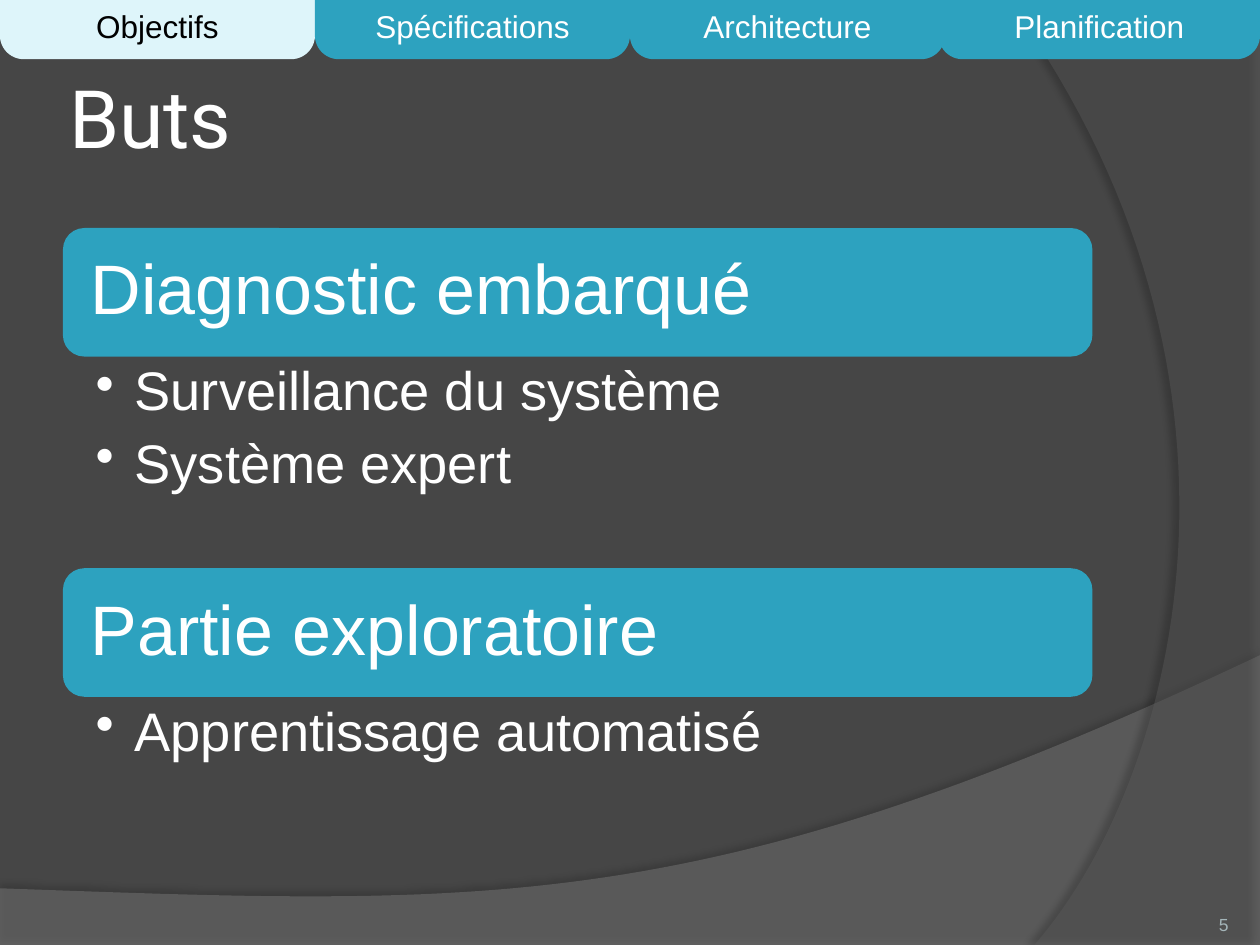
from lxml.etree import SubElement
from pptx import Presentation
from pptx.dml.color import RGBColor
from pptx.enum.shapes import MSO_SHAPE as Shape
from pptx.enum.text import MSO_ANCHOR as Anchor, PP_ALIGN as Align
from pptx.oxml.ns import qn
from pptx.util import Inches, Pt

BACKGROUND = RGBColor(0x46, 0x46, 0x46)
WAVE = RGBColor(0x7F, 0x7F, 0x7F)
ARC = RGBColor(0x5E, 0x5E, 0x5E)
TEAL = RGBColor(0x2D, 0xA2, 0xBF)
PALE = RGBColor(0xDE, 0xF5, 0xFA)
WHITE = RGBColor(0xFF, 0xFF, 0xFF)
BLACK = RGBColor(0x00, 0x00, 0x00)
NUMBER_GREY = RGBColor(0xA4, 0xB5, 0xB9)

LEFT, WIDTH = 0.5, 8.17
HEADER_HEIGHT = 1.02
TAB_HEIGHT = 0.47
GOALS = [
    (1.81, 1.68, "Diagnostic embarqué", ["Surveillance du système", "Système expert"]),
    (4.51, 1.11, "Partie exploratoire", ["Apprentissage automatisé"]),
]
TABS = [
    (0, 2.5, "Objectifs"),
    (2.5, 2.5, "Spécifications"),
    (5, 2.5, "Architecture"),
    (7.45, 2.55, "Planification"),
]


def bezier(start, control1, control2, end, steps=60):
    """Return the points of a cubic curve after its start."""
    points = []
    for step in range(1, steps + 1):
        t = step / steps
        weights = ((1 - t) ** 3, 3 * t * (1 - t) ** 2, 3 * t * t * (1 - t), t ** 3)
        corners = (start, control1, control2, end)
        points.append(tuple(sum(w * corner[axis] for w, corner in zip(weights, corners))
                            for axis in (0, 1)))
    return points


def add_backdrop(slide, points, color, opacity, shadow):
    """Draw a translucent outline; shadow is opacity, blur, distance, direction."""
    (x, y), *others = [(Inches(x), Inches(y)) for x, y in points]
    builder = slide.shapes.build_freeform(x, y)
    builder.add_line_segments(others, close=True)
    shape = builder.convert_to_shape()
    paint(shape, color)
    fill_color = shape.fill._xPr.find(qn("a:solidFill"))[0]
    SubElement(fill_color, qn("a:alpha"), val=str(opacity * 1000))

    shadow_opacity, blur, distance, direction = shadow
    effects = shape._element.spPr.find(qn("a:effectLst"))
    outer = SubElement(effects, qn("a:outerShdw"), blurRad=str(Pt(blur)),
                       dist=str(Pt(distance)), dir=str(direction * 60000),
                       algn="ctr", rotWithShape="0")
    shadow_color = SubElement(outer, qn("a:srgbClr"), val=str(BLACK))
    SubElement(shadow_color, qn("a:alpha"), val=str(shadow_opacity * 1000))


def paint(shape, color):
    shape.shadow.inherit = False
    shape.fill.solid()
    shape.fill.fore_color.rgb = color
    shape.line.fill.background()


def set_frame(frame, insets=(0.1, 0.05, 0.1, 0.05), anchor=Anchor.MIDDLE):
    frame.word_wrap = True
    frame.vertical_anchor = anchor
    for side, inset in zip(("left", "top", "right", "bottom"), insets):
        setattr(frame, f"margin_{side}", Inches(inset))


def write(para, text, size, color=WHITE, font="Arial", **paragraph_format):
    for name, value in paragraph_format.items():
        setattr(para, name, value)
    span = para.add_run()
    span.text = text
    for name, value in {"name": font, "size": Pt(size)}.items():
        setattr(span.font, name, value)
    span.font.color.rgb = color


def add_bullet(para):
    properties = para._p.get_or_add_pPr()
    properties.set("marL", str(Inches(0.31)))
    properties.set("indent", str(Inches(-0.31)))
    SubElement(properties, qn("a:buChar"), char="•")


def add_title(slide, text):
    title = slide.shapes.title
    place = {"left": LEFT, "top": 0.3, "width": WIDTH, "height": 1.25}
    for name, value in place.items():
        setattr(title, name, Inches(value))
    set_frame(title.text_frame, (0.05,) * 4)
    write(title.text_frame.paragraphs[0], text, 46, font="Roboto", alignment=Align.LEFT)


def add_goal(slide, top, list_height, heading, items):
    """Add a rounded heading with its bulleted list directly below."""
    header = slide.shapes.add_shape(Shape.ROUNDED_RECTANGLE, Inches(LEFT), Inches(top),
                                    Inches(WIDTH), Inches(HEADER_HEIGHT))
    paint(header, TEAL)
    set_frame(header.text_frame, (0.17,) * 4)
    write(header.text_frame.paragraphs[0], heading, 40,
          alignment=Align.LEFT, line_spacing=0.9)

    box = slide.shapes.add_textbox(Inches(LEFT), Inches(top + HEADER_HEIGHT),
                                   Inches(WIDTH), Inches(list_height))
    frame = box.text_frame
    set_frame(frame, (0.26, 0.06, 0.31, 0.06), Anchor.TOP)
    for index, item in enumerate(items):
        para = frame.add_paragraph() if index else frame.paragraphs[0]
        write(para, item, 31, line_spacing=0.9, space_after=Pt(8))
        add_bullet(para)


def add_page_number(slide, number):
    box = slide.shapes.add_textbox(Inches(8.92), Inches(7.02), Inches(0.83), Inches(0.4))
    set_frame(box.text_frame, (0,) * 4, Anchor.BOTTOM)
    write(box.text_frame.paragraphs[0], number, 10, NUMBER_GREY, alignment=Align.RIGHT)


def add_tab(slide, left, width, label, active):
    tab = slide.shapes.add_shape(Shape.ROUND_2_SAME_RECTANGLE, Inches(left), 0,
                                 Inches(width), Inches(TAB_HEIGHT))
    tab.adjustments[0] = 0
    tab.adjustments[1] = 0.4
    paint(tab, PALE if active else TEAL)
    set_frame(tab.text_frame)
    write(tab.text_frame.paragraphs[0], label, 18, BLACK if active else WHITE,
          alignment=Align.CENTER)


def main():
    deck = Presentation()
    deck.slide_width, deck.slide_height = Inches(10), Inches(7.5)
    slide = deck.slides.add_slide(deck.slide_layouts[5])
    slide.background.fill.solid()
    slide.background.fill.fore_color.rgb = BACKGROUND

    wave = [(0, 7.05), (0, 7.51), (10, 7.51), (10, 5.2)]
    wave += bezier(wave[-1], (5.59, 7.29), (3.91, 7.19), wave[0])
    add_backdrop(slide, wave, WAVE, 45, (35, 4, 3.5, 270))
    arc = [(10, 0.02), (10, 7.5), (8.21, 7.5)]
    arc += bezier(arc[-1], (9.35, 6.19), (10.18, 3), (8, 0))
    add_backdrop(slide, arc, ARC, 40, (45, 4, 4, 180))

    add_title(slide, "Buts")
    for goal in GOALS:
        add_goal(slide, *goal)
    add_page_number(slide, "5")
    for index, tab in enumerate(TABS):
        add_tab(slide, *tab, active=index == 0)
    deck.save("out.pptx")


if __name__ == "__main__":
    main()
